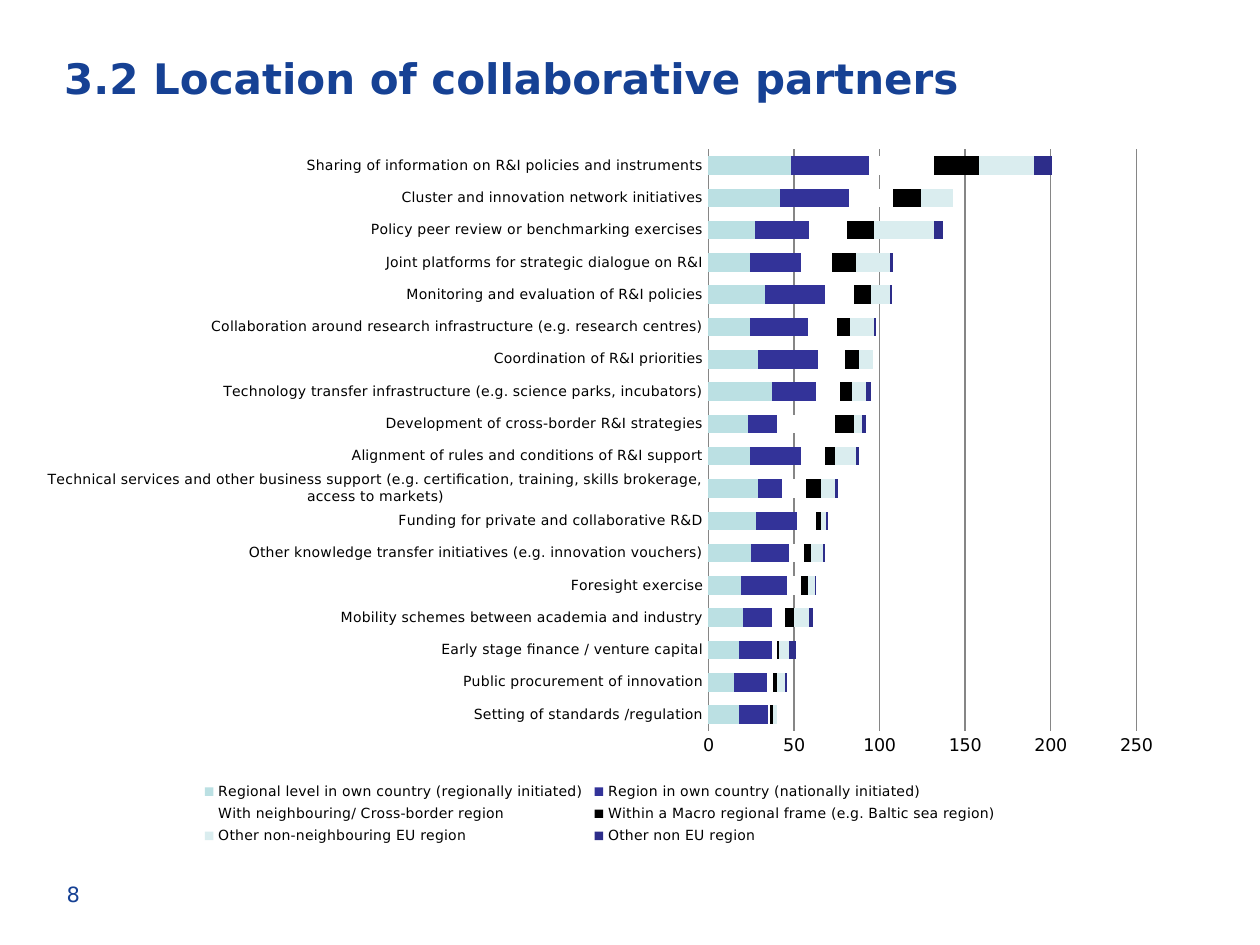
from lxml import etree
from pptx import Presentation
from pptx.chart.data import CategoryChartData
from pptx.dml.color import RGBColor
from pptx.enum import chart as charts, text
from pptx.oxml import ns
from pptx.util import Inches, Pt

FONT = "DejaVu Sans"
WIDTH, HEIGHT = Inches(10), Inches(7.5)
COLOURS = {
    "heading": "164194", "text": "000000", "grid": "868686",
    "regional": "BBE0E3", "national": "333399", "neighbour": "FFFFFF",
    "macro": "000000", "other_eu": "DAEDEF", "non_eu": "2D2D8A",
}

# Activity, followed by one value per partner location; bottom bar first
ACTIVITIES = [
    ("Setting of standards /regulation", 18, 17, 1, 2, 2, 0),
    ("Public procurement of innovation", 15, 19, 4, 2, 5, 1),
    ("Early stage finance / venture capital", 18, 19, 3, 1, 6, 4),
    ("Mobility schemes between academia and industry", 20, 17, 8, 5, 9, 2),
    ("Foresight exercise", 19, 27, 8, 4, 4, 1),
    ("Other knowledge transfer initiatives (e.g. innovation vouchers)", 25, 22, 9, 4, 7, 1),
    ("Funding for private and collaborative R&D", 28, 24, 11, 3, 3, 1),
    ("Technical services and other business support (e.g. certification, training, "
     "skills brokerage, access to markets)", 29, 14, 14, 9, 8, 2),
    ("Alignment of rules and conditions of R&I support", 24, 30, 14, 6, 12, 2),
    ("Development of cross-border R&I strategies", 23, 17, 34, 11, 5, 2),
    ("Technology transfer infrastructure (e.g. science parks, incubators)", 37, 26, 14, 7, 8, 3),
    ("Coordination of R&I priorities", 29, 35, 16, 8, 8, 0),
    ("Collaboration around research infrastructure (e.g. research centres)",
     24, 34, 17, 8, 14, 1),
    ("Monitoring and evaluation of R&I policies", 33, 35, 17, 10, 11, 1),
    ("Joint platforms for strategic dialogue on R&I", 24, 30, 18, 14, 20, 2),
    ("Policy peer review or benchmarking exercises", 27, 32, 22, 16, 35, 5),
    ("Cluster and innovation network initiatives", 42, 40, 26, 16, 19, 0),
    ("Sharing of information on R&I policies and instruments", 48, 46, 38, 26, 32, 11),
]
LOCATIONS = [
    ("Regional level in own country (regionally initiated)", "regional"),
    ("Region in own country (nationally initiated)", "national"),
    ("With neighbouring/ Cross-border region", "neighbour"),
    ("Within a Macro regional frame (e.g. Baltic sea region)", "macro"),
    ("Other non-neighbouring EU region", "other_eu"),
    ("Other non EU region", "non_eu"),
]


def colour(name):
    return RGBColor.from_string(COLOURS[name])


def place(left, top, width, height):
    """Turn shares of the slide into lengths."""
    return (round(left * WIDTH), round(top * HEIGHT),
            round(width * WIDTH), round(height * HEIGHT))


def style_font(font, size, name="text", bold=False):
    font.name, font.size, font.bold = FONT, Pt(size), bold
    font.color.rgb = colour(name)


def add_line(page, area, words, size, bold=False, inset=0.0,
             anchor=text.MSO_ANCHOR.TOP, spacing=1.0):
    frame = page.shapes.add_textbox(*place(*area)).text_frame
    frame.word_wrap = True
    frame.vertical_anchor = anchor
    frame.margin_left = frame.margin_right = Inches(inset)
    frame.margin_top = frame.margin_bottom = 0
    frame.text = words
    para = frame.paragraphs[0]
    para.line_spacing = spacing
    style_font(para.runs[0].font, size, "heading", bold)


def set_layout(element, successors, area, inner=False):
    """Fix a chart part at shares of the chart's box."""
    for old in element.findall(ns.qn("c:layout")):
        element.remove(old)
    layout = etree.Element(ns.qn("c:layout"))
    manual = etree.SubElement(layout, ns.qn("c:manualLayout"))
    settings = [("layoutTarget", "inner")] if inner else []
    settings += [("xMode", "edge"), ("yMode", "edge"), *zip("xywh", area)]
    for tag, value in settings:
        etree.SubElement(manual, ns.qn("c:" + tag)).set("val", str(value))
    following = next(child for child in element
                     if child.tag in [ns.qn(tag) for tag in successors])
    following.addprevious(layout)


def style_axes(chart):
    for axis, size in ((chart.category_axis, 8), (chart.value_axis, 10)):
        axis.major_tick_mark = axis.minor_tick_mark = charts.XL_TICK_MARK.NONE
        style_font(axis.tick_labels.font, size)
    chart.category_axis.format.line.color.rgb = colour("grid")
    values = chart.value_axis
    values.minimum_scale, values.maximum_scale, values.major_unit = 0, 250, 50
    values.format.line.fill.background()
    values.has_major_gridlines = True
    values.major_gridlines.format.line.color.rgb = colour("grid")
    values.major_gridlines.format.line.width = Pt(0.75)


def add_partner_chart(page, area):
    data = CategoryChartData()
    names, *columns = zip(*ACTIVITIES)
    data.categories = names
    for (location, _), column in zip(LOCATIONS, columns):
        data.add_series(location, column)
    chart = page.shapes.add_chart(
        charts.XL_CHART_TYPE.BAR_STACKED, *place(*area), data).chart
    chart.has_title = False
    style_font(chart.font, 10)
    style_axes(chart)

    # Bars
    plot = chart.plots[0]
    plot.gap_width, plot.overlap, plot.vary_by_categories = 75, 100, False
    for series, (_, name) in zip(plot.series, LOCATIONS):
        series.format.fill.solid()
        series.format.fill.fore_color.rgb = colour(name)
        series.format.line.fill.background()

    # Legend and plot positions
    chart.has_legend = True
    legend = chart.legend
    legend.position = charts.XL_LEGEND_POSITION.BOTTOM
    legend.include_in_layout = False
    style_font(legend.font, 8)
    plot_area = plot._element.getparent()
    set_layout(plot_area, ["c:barChart"], (0.594, 0.02, 0.372, 0.814), inner=True)
    set_layout(legend._element, ["c:overlay"], (0.15, 0.9, 0.7, 0.1))


def build_slide(deck):
    page = deck.slides.add_slide(deck.slide_layouts[6])
    # Title
    add_line(page, (0.051, 0.05, 0.898, 0.073),
             "3.2 Location of collaborative partners", 24, bold=True, spacing=1.1)
    # Chart
    add_partner_chart(page, (0.02, 0.143, 0.913, 0.756))
    # Page number
    add_line(page, (0.043, 0.92, 0.233, 0.053), "8", 12, inset=0.1,
             anchor=text.MSO_ANCHOR.MIDDLE)


def main():
    deck = Presentation()
    deck.slide_width, deck.slide_height = WIDTH, HEIGHT
    build_slide(deck)
    deck.save("out.pptx")


if __name__ == "__main__":
    main()
